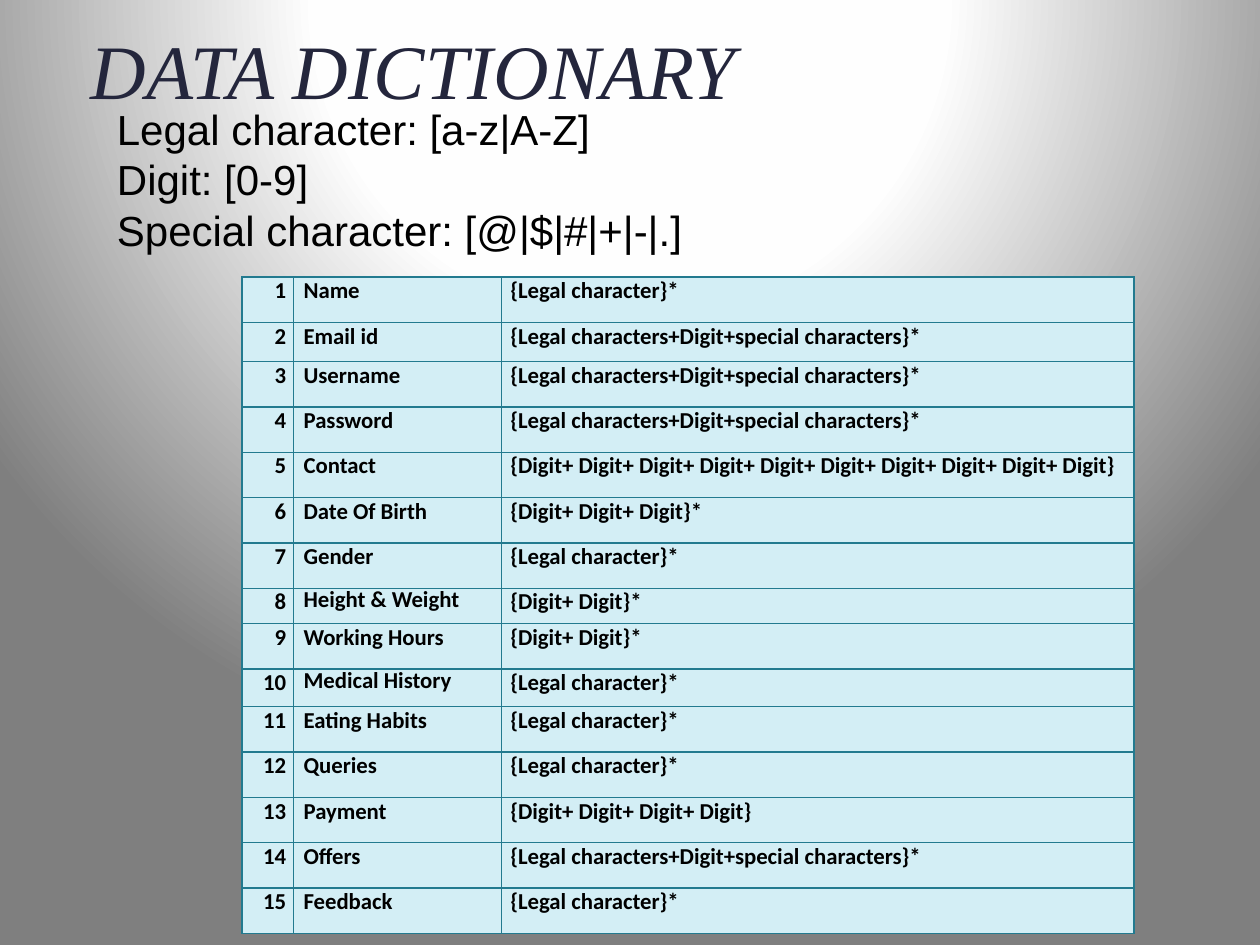
from dataclasses import dataclass

from pptx import Presentation
from pptx.dml.color import RGBColor as Color
from pptx.enum.text import MSO_ANCHOR as Anchor, PP_ALIGN as Align
from pptx.oxml import parse_xml
from pptx.oxml.ns import nsdecls, qn
from pptx.util import Inches, Pt

TITLE = "DATA DICTIONARY"
DEFINITIONS = [
    "Legal character: [a-z|A-Z]",
    "Digit: [0-9]",
    "Special character: [@|$|#|+|-|.]",
]
LETTERS = "{Legal character}*"
MIXED = "{Legal characters+Digit+special characters}*"
FIELDS = [
    ("Name", LETTERS),
    ("Email id", MIXED),
    ("Username", MIXED),
    ("Password", MIXED),
    ("Contact", "{Digit+ Digit+ Digit+ Digit+ Digit+ Digit+ Digit+ Digit+ Digit+ Digit}"),
    ("Date Of Birth", "{Digit+ Digit+ Digit}*"),
    ("Gender", LETTERS),
    ("Height & Weight", "{Digit+ Digit}*"),
    ("Working Hours", "{Digit+ Digit}*"),
    ("Medical History", LETTERS),
    ("Eating Habits", LETTERS),
    ("Queries", LETTERS),
    ("Payment", "{Digit+ Digit+ Digit+ Digit}"),
    ("Offers", MIXED),
    ("Feedback", LETTERS),
]
ROW_HEIGHT = 0.36
SHORT_ROWS = {"Email id": 0.31, "Height & Weight": 0.28, "Medical History": 0.3}
TIGHT_NAMES = {"Height & Weight", "Medical History"}
# width, alignment, indent attribute, indent
COLUMNS = [
    (0.41, Align.RIGHT, "marR", 0.06),
    (1.65, Align.LEFT, "marL", 0.08),
    (5.02, Align.LEFT, "marL", 0.07),
]


@dataclass(frozen=True)
class Theme:
    title = {"name": "Times New Roman", "size": Pt(44), "italic": True, "color": "24263C"}
    body = {"name": "Arial", "size": Pt(24), "color": "000000"}
    cell = {"name": "Calibri", "size": Pt(13), "bold": True, "color": "000000"}
    cell_fill = "D3EEF5"
    border = "227A8F"
    background = ((0, "FFFFFF"), (40, "FEFEFE"), (100, "7F7F7F"))


THEME = Theme()


def set_format(font, values):
    for key, value in values.items():
        if key == "color":
            font.color.rgb = Color.from_string(value)
        else:
            setattr(font, key, value)


def set_background(slide):
    """Give the slide a circular gradient centred above its top edge."""
    slide.background.fill.solid()
    properties = slide.background._cSld.find(".//" + qn("p:bgPr"))
    stops = "".join(
        f'<a:gs pos="{place * 1000}"><a:srgbClr val="{color}"/></a:gs>'
        for place, color in THEME.background
    )
    gradient = parse_xml(
        f'<a:gradFill {nsdecls("a")} rotWithShape="1"><a:gsLst>{stops}</a:gsLst>'
        '<a:path path="circle"><a:fillToRect l="50000" t="-80000" r="50000" b="180000"/>'
        "</a:path></a:gradFill>"
    )
    properties.replace(properties.find(qn("a:solidFill")), gradient)


def add_text(slide, box, lines, values, anchor=Anchor.TOP):
    frame = slide.shapes.add_textbox(*map(Inches, box)).text_frame
    frame.word_wrap = True
    frame.vertical_anchor = anchor
    frame.text = "\n".join(lines)
    for paragraph in frame.paragraphs:
        set_format(paragraph.font, values)


def style_cell(cell):
    for side in ("left", "right", "top", "bottom"):
        setattr(cell, f"margin_{side}", 0)
    properties = cell._tc.get_or_add_tcPr()
    for tag in ("lnL", "lnR", "lnT", "lnB"):
        properties.append(parse_xml(
            f'<a:{tag} {nsdecls("a")} w="{Pt(1)}"><a:solidFill>'
            f'<a:srgbClr val="{THEME.border}"/></a:solidFill></a:{tag}>'
        ))
    cell.fill.solid()
    cell.fill.fore_color.rgb = Color.from_string(THEME.cell_fill)


def add_dictionary(slide, left, top):
    heights = [SHORT_ROWS.get(name, ROW_HEIGHT) for name, _ in FIELDS]
    width = sum(column[0] for column in COLUMNS)
    table = slide.shapes.add_table(
        len(FIELDS), len(COLUMNS),
        *map(Inches, (left, top, width, sum(heights))),
    ).table
    table.first_row = table.horz_banding = False
    for column, (column_width, *_) in zip(table.columns, COLUMNS):
        column.width = Inches(column_width)
    for number, (row, height, field) in enumerate(zip(table.rows, heights, FIELDS), 1):
        row.height = Inches(height)
        for cell, text, (_, align, side, indent) in zip(row.cells, (str(number), *field), COLUMNS):
            style_cell(cell)
            cell.text = text
            paragraph = cell.text_frame.paragraphs[0]
            paragraph.alignment = align
            paragraph._p.get_or_add_pPr().set(side, str(Inches(indent)))
            if text in TIGHT_NAMES:
                paragraph.line_spacing = Pt(14.5)
            set_format(paragraph.runs[0].font, THEME.cell)


def main():
    presentation = Presentation()
    presentation.slide_width, presentation.slide_height = Inches(10), Inches(7.5)
    slide = presentation.slides.add_slide(presentation.slide_layouts[6])
    set_background(slide)
    add_text(slide, (0.62, -0.08, 6.13, 1.25), [TITLE], THEME.title, Anchor.MIDDLE)
    add_dictionary(slide, 1.92, 2.2)
    add_text(slide, (0.83, 0.77, 5, 1.31), DEFINITIONS, THEME.body)
    presentation.save("out.pptx")


if __name__ == "__main__":
    main()
